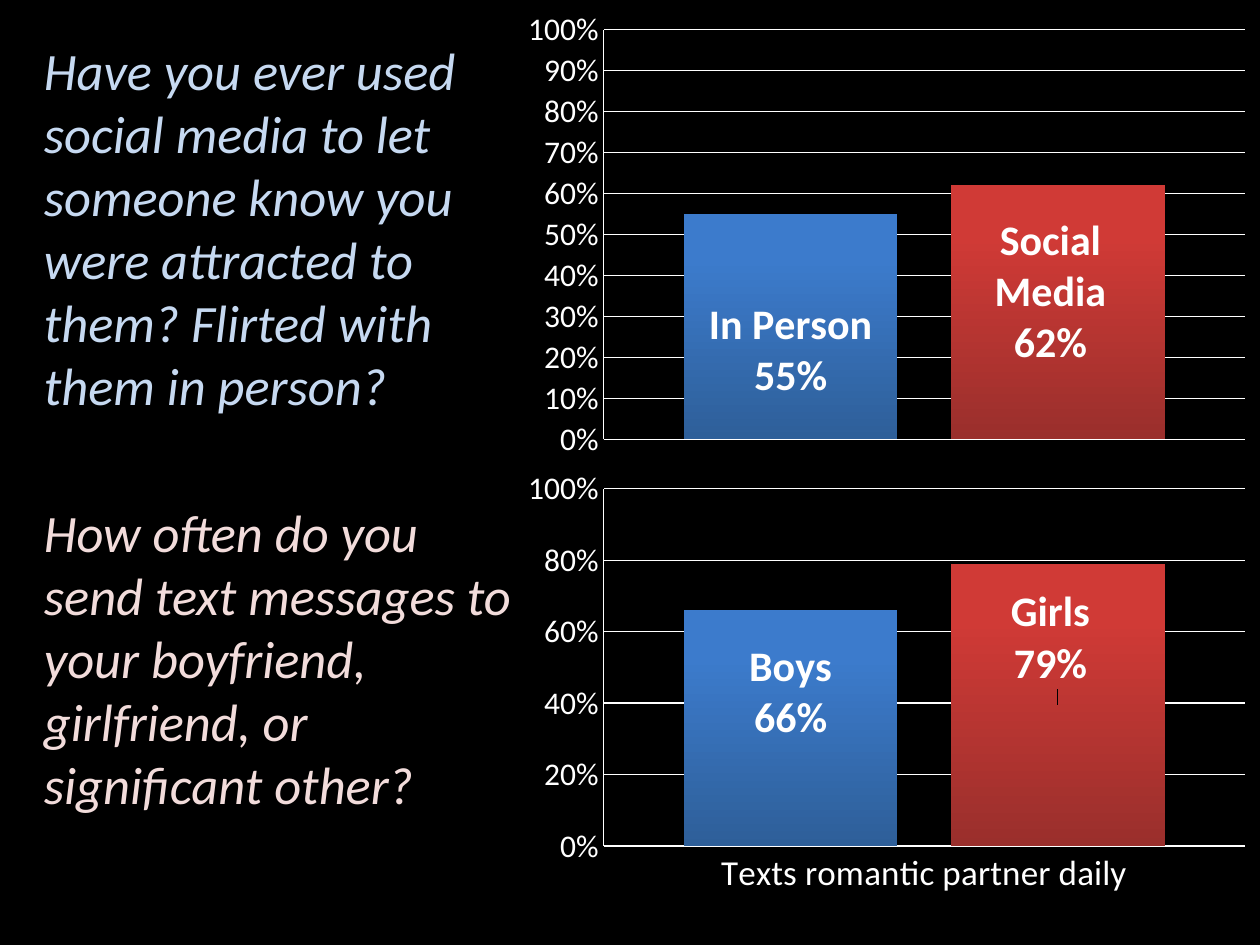
from lxml import etree
from pptx import Presentation
from pptx.chart.data import CategoryChartData
from pptx.dml.color import RGBColor
from pptx.enum.chart import XL_CHART_TYPE as ChartType
from pptx.enum.chart import XL_LABEL_POSITION as LabelPos
from pptx.enum.chart import XL_TICK_MARK as Tick
from pptx.oxml import parse_xml
from pptx.oxml.ns import nsdecls, qn
from pptx.util import Inches, Pt

FONT = "Calibri"
BLACK = RGBColor(0x00, 0x00, 0x00)
WHITE = RGBColor(0xFF, 0xFF, 0xFF)
PALE_BLUE = RGBColor(0xC6, 0xD9, 0xF1)
PALE_PINK = RGBColor(0xF2, 0xDC, 0xDB)
BLUE = (RGBColor(0x2E, 0x5F, 0x99), RGBColor(0x3C, 0x7B, 0xCC))
RED = (RGBColor(0x9A, 0x2F, 0x2C), RGBColor(0xD0, 0x3A, 0x36))


def set_font(font, size, color=WHITE, bold=False, italic=False):
    """Apply the shared typeface with the given format."""
    font.name, font.size = FONT, Pt(size)
    font.bold, font.italic = bold, italic
    font.color.rgb = color


def add_text(s, box, text, **fmt):
    """Place one wrapped paragraph in the box."""
    tf = s.shapes.add_textbox(*map(Inches, box)).text_frame
    tf.word_wrap = True
    r = tf.paragraphs[0].add_run()
    r.text = text
    set_font(r.font, **fmt)


def layout_xml(x, y, w=None, h=None):
    """Return a manual layout: an inner plot area if sized, else an offset."""
    modes, sizes = "", ""
    if w is not None:
        modes = ('<c:layoutTarget val="inner"/><c:xMode val="edge"/>'
                 '<c:yMode val="edge"/>')
        sizes = f'<c:w val="{w}"/><c:h val="{h}"/>'
    return parse_xml(f'<c:layout {nsdecls("c")}><c:manualLayout>{modes}'
                     f'<c:x val="{x}"/><c:y val="{y}"/>{sizes}'
                     '</c:manualLayout></c:layout>')


def style_axes(chart, unit, cat_size):
    """Format both axes and the gridlines."""
    cat, val = chart.category_axis, chart.value_axis
    val.minimum_scale, val.maximum_scale, val.major_unit = 0, 1, unit
    val.has_major_gridlines = True
    val.tick_labels.number_format = "0%"
    val.tick_labels.number_format_is_linked = False
    for axis, size in ((cat, cat_size), (val, 18)):
        axis.major_tick_mark = axis.minor_tick_mark = Tick.NONE
        set_font(axis.tick_labels.font, size)
    for line in (cat.format.line, val.format.line,
                 val.major_gridlines.format.line):
        line.color.rgb, line.width = WHITE, Pt(0.75)


def style_bar(series, colors, offset):
    """Give a bar its gradient and a label of name over value."""
    fill = series.format.fill
    fill.gradient()
    fill.gradient_angle = 90
    for stop, color, position in zip(fill.gradient_stops, colors, (0, 0.8)):
        stop.color.rgb, stop.position = color, position
    series.invert_if_negative = False
    label = series.points[0].data_label
    set_font(label.font, 24, bold=True)
    label.position = LabelPos.CENTER
    d = series._element.find(".//" + qn("c:dLbl"))
    d.find(qn("c:idx")).addnext(layout_xml(*offset))
    d.find(qn("c:showSerName")).set("val", "1")
    etree.SubElement(d, qn("c:separator")).text = "\n"


def add_bars(s, box, category, bars, plot_area, unit, cat_size=18):
    """Place a two-bar percentage chart in the box."""
    data = CategoryChartData(number_format="0%")
    data.categories = [category]
    for name, value, _, _ in bars:
        data.add_series(name, [value])
    chart = s.shapes.add_chart(ChartType.COLUMN_CLUSTERED,
                               *map(Inches, box), data).chart
    chart.has_legend = chart.has_title = False
    set_font(chart.font, 18)
    area = chart._chartSpace.find(".//" + qn("c:plotArea"))
    old = area.find(qn("c:layout"))
    if old is not None:
        area.remove(old)
    area.insert(0, layout_xml(*plot_area))
    plot = chart.plots[0]
    plot.gap_width, plot.overlap, plot.vary_by_categories = 75, -25, False
    style_axes(chart, unit, cat_size)
    for series, (_, _, colors, offset) in zip(plot.series, bars):
        style_bar(series, colors, offset)


def main():
    """Build and save the slide."""
    prs = Presentation()
    prs.slide_width, prs.slide_height = Inches(10), Inches(7.5)
    s = prs.slides.add_slide(prs.slide_layouts[6])
    s.background.fill.solid()
    s.background.fill.fore_color.rgb = BLACK
    add_text(s, (0.25, 0.25, 4, 3.13),
             "Have you ever used social media to let someone know you were "
             "attracted to them? Flirted with them in person?",
             size=30, color=PALE_BLUE, italic=True)
    add_bars(s, (4.08, 0, 5.92, 3.92), " ",
             [("In Person", 0.55, BLUE, (0, 0.05)),
              ("Social Media", 0.62, RED, (-0.01, -0.04))],
             (0.12, 0.06, 0.86, 0.83), unit=0.1)
    add_bars(s, (4.08, 3.67, 5.92, 3.5), "Texts romantic partner daily",
             [("Boys", 0.66, BLUE, (0, -0.08)),
              ("Girls", 0.79, RED, (-0.01, -0.15))],
             (0.12, 0.06, 0.86, 0.81), unit=0.2, cat_size=20)
    add_text(s, (0.25, 3.92, 4, 2.63),
             "How often do you send text messages to your boyfriend, "
             "girlfriend, or significant other?",
             size=30, color=PALE_PINK, italic=True)
    prs.save("out.pptx")


if __name__ == "__main__":
    main()
